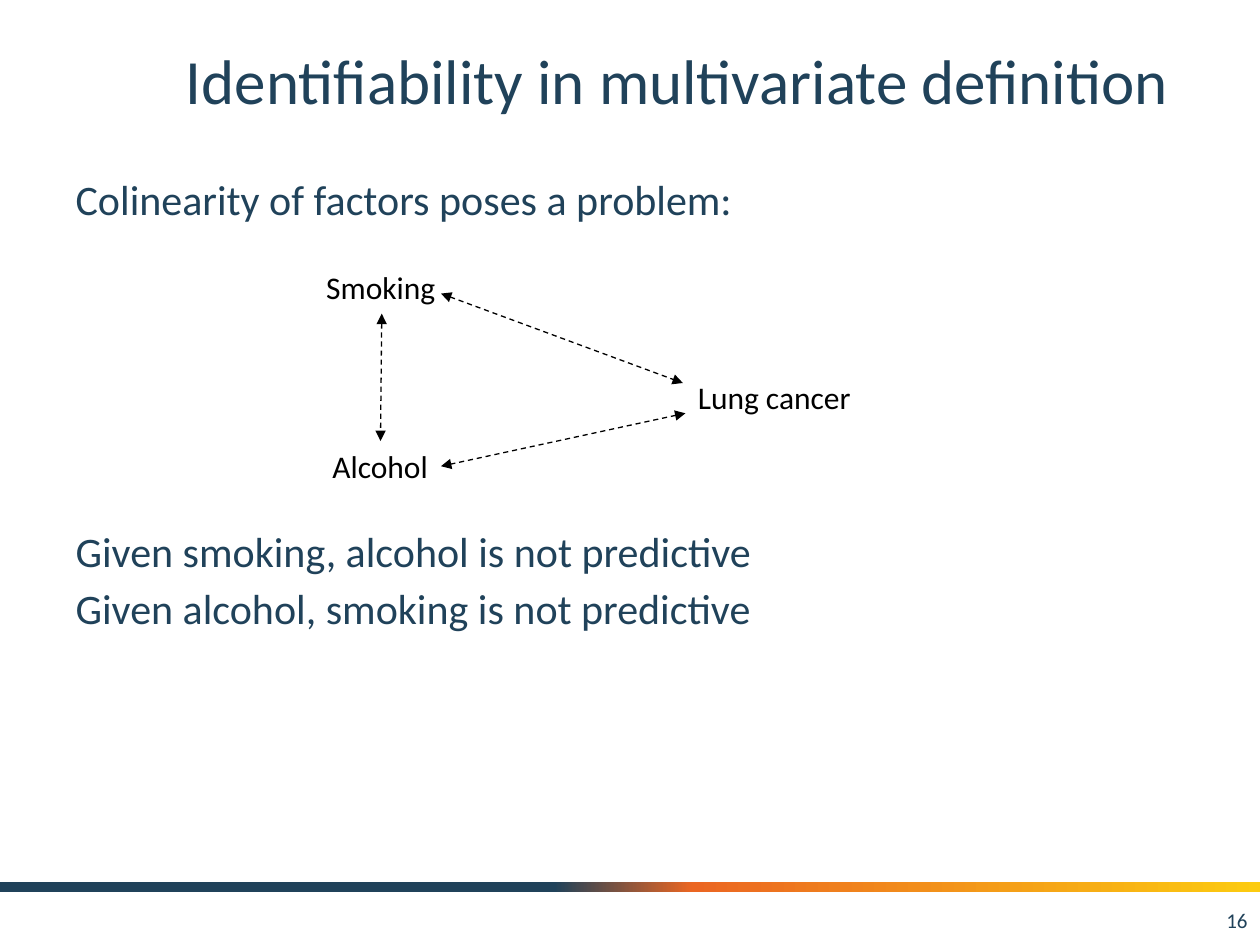
from copy import deepcopy
from dataclasses import dataclass

from pptx import Presentation, util as u
from pptx.dml.color import RGBColor
from pptx.enum import dml, shapes, text
from pptx.oxml.ns import qn
from lxml import etree


@dataclass(frozen=True)
class Theme:
    font: str = "Calibri"
    navy: str = "20425A"
    orange: str = "EB6622"
    yellow: str = "FCCB10"
    black: str = "000000"
    title: int = 36
    body: int = 24
    label: int = 18
    number: int = 12


THEME = Theme()


def inches(box):
    return [u.Inches(value) for value in box]


def place(shape, box):
    shape.left, shape.top, shape.width, shape.height = inches(box)


def style(para, size, color, align=text.PP_ALIGN.LEFT):
    para.alignment = align
    for span in para.runs:
        span.font.name = THEME.font
        span.font.size = u.Pt(size)
        span.font.color.rgb = RGBColor.from_string(color)


def add_title(page, box, words):
    title = page.shapes.title
    place(title, box)
    frame = title.text_frame
    frame.text = words
    frame.auto_size = text.MSO_AUTO_SIZE.NONE
    frame.vertical_anchor = text.MSO_ANCHOR.MIDDLE
    style(frame.paragraphs[0], THEME.title, THEME.navy, text.PP_ALIGN.CENTER)


def add_body(page, box, lines):
    """Fill the body with (words, points of space before) lines."""
    body = page.placeholders[1]
    place(body, box)
    frame = body.text_frame
    frame.text = "\n".join(words for words, _ in lines)
    frame.auto_size = text.MSO_AUTO_SIZE.NONE
    for para, (_, gap) in zip(frame.paragraphs, lines):
        props = para._p.get_or_add_pPr()
        props.set("marL", "0")
        props.set("indent", "0")
        etree.SubElement(props, qn("a:buNone"))
        para.space_before = u.Pt(gap)
        style(para, THEME.body, THEME.navy)


def add_text(page, box, words, size, color, align=text.PP_ALIGN.LEFT, wrap=False):
    frame = page.shapes.add_textbox(*inches(box)).text_frame
    frame.text = words
    frame.word_wrap = wrap
    frame.vertical_anchor = text.MSO_ANCHOR.MIDDLE
    style(frame.paragraphs[0], size, color, align)


def add_arrow(page, start, end):
    """Dashed line with a triangle at each end."""
    arrow = page.shapes.add_connector(
        shapes.MSO_CONNECTOR.STRAIGHT, *inches(start + end))
    arrow.line.color.rgb = RGBColor.from_string(THEME.black)
    arrow.line.width = u.Pt(0.75)
    arrow.line.dash_style = dml.MSO_LINE.DASH
    outline = arrow.line._get_or_add_ln()
    for tip in ("a:headEnd", "a:tailEnd"):
        etree.SubElement(outline, qn(tip), type="triangle")
    etree.SubElement(arrow._element.spPr, qn("a:effectLst"))


def add_diagram(page, box):
    """Three factors, each linked with the other two."""
    left, top, width, height = box
    right, bottom = left + width, top + height
    labels = [
        ("Smoking", (left, top, 1.08, 0.4)),
        ("Alcohol", (left + 0.05, bottom - 0.4, 0.97, 0.4)),
        ("Lung cancer", (right - 1.43, top + 0.87, 1.43, 0.4)),
    ]
    for words, spot in labels:
        add_text(page, spot, words, THEME.label, THEME.black)
    add_arrow(page, (left + 1.01, top + 0.25), (right - 1.45, top + 0.96))
    add_arrow(page, (left + 0.54, top + 0.41), (left + 0.53, bottom - 0.4))
    add_arrow(page, (right - 1.43, top + 1.2), (left + 1.01, bottom - 0.2))


def add_footer(page, box, number):
    # Gradient bar
    left, top, width, height = box
    bar = page.shapes.add_shape(
        shapes.MSO_SHAPE.RECTANGLE, *inches((left, top, width, 0.08)))
    bar.shadow.inherit = False
    bar.line.fill.background()
    bar.fill.gradient()
    bar.fill.gradient_angle = 0
    stop_list = bar._element.spPr.find(".//" + qn("a:gsLst"))
    stop_list.append(deepcopy(stop_list[-1]))
    stops = ((0.44, THEME.navy), (0.55, THEME.orange), (1, THEME.yellow))
    for stop, (position, color) in zip(bar.fill.gradient_stops, stops):
        stop.position = position
        stop.color.rgb = RGBColor.from_string(color)

    # Page number
    add_text(page, (left + width - 2.33, top + 0.1, 2.33, height - 0.1), number,
             THEME.number, THEME.navy, text.PP_ALIGN.RIGHT, wrap=True)


def main():
    deck = Presentation()
    deck.slide_width, deck.slide_height = u.Inches(10), u.Inches(7.5)
    page = deck.slides.add_slide(deck.slide_layouts[1])
    add_footer(page, (0, 7, 10, 0.5), "16")
    add_title(page, (1.25, 0.17, 8.25, 0.92),
              "Identifiability in multivariate definition")
    # The wide gap leaves room for the diagram
    add_body(page, (0.5, 1.33, 9, 5.37), [
        ("Colinearity of factors poses a problem:", 0),
        ("Given smoking, alcohol is not predictive", 172),
        ("Given alcohol, smoking is not predictive", 4),
    ])
    add_diagram(page, (2.49, 2.08, 4.38, 1.82))
    deck.save("out.pptx")


if __name__ == "__main__":
    main()
